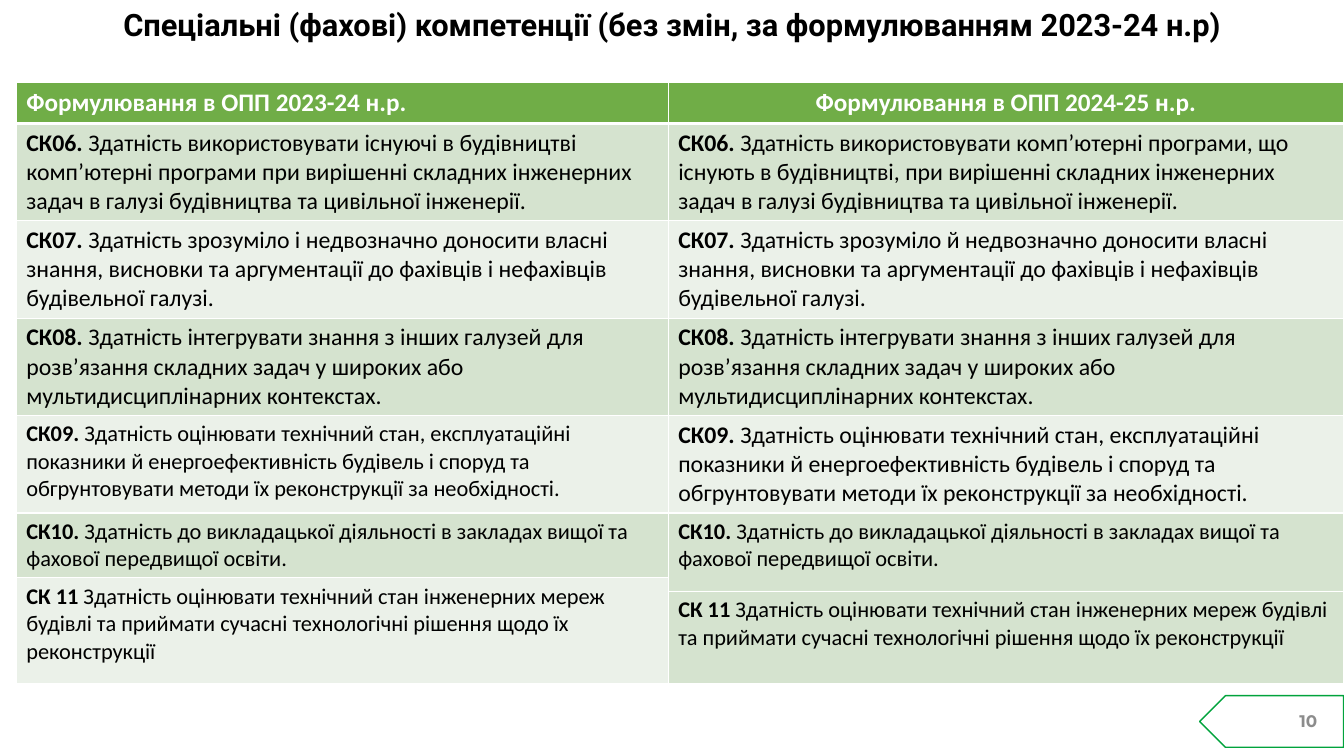
import dataclasses

import lxml.etree
import pptx
import pptx.dml.color
import pptx.enum.shapes
import pptx.enum.text
import pptx.oxml.ns
import pptx.util

Cm = pptx.util.Cm
Align = pptx.enum.text.PP_ALIGN
Anchor = pptx.enum.text.MSO_ANCHOR


@dataclasses.dataclass(frozen=True)
class Theme:
    header: str = "70AD47"
    dark_band: str = "D5E3CF"
    light_band: str = "EBF1E9"
    white: str = "FFFFFF"
    black: str = "000000"
    grey: str = "8C8C8C"
    outline: str = "01A33C"
    title_size: int = 22
    header_size: int = 18
    body_size: int = 17
    small_size: int = 16
    number_size: int = 12


theme = Theme()
rgb = pptx.dml.color.RGBColor.from_string


def write(para, text, font="Calibri", size=theme.body_size, color=theme.black,
          bold=False, align=Align.LEFT):
    para.alignment = align
    span = para.add_run()
    span.text = text
    span.font.name = font
    span.font.size = pptx.util.Pt(size)
    span.font.bold = bold
    span.font.color.rgb = rgb(color)


def style_cell(cell, fill, bottom_width):
    properties = cell._tc.get_or_add_tcPr()
    for side in ("lnL", "lnR", "lnT", "lnB"):
        width = bottom_width if side == "lnB" else 1
        line = lxml.etree.SubElement(properties, pptx.oxml.ns.qn(f"a:{side}"),
                                     w=str(pptx.util.Pt(width)))
        paint = lxml.etree.SubElement(line, pptx.oxml.ns.qn("a:solidFill"))
        lxml.etree.SubElement(paint, pptx.oxml.ns.qn("a:srgbClr"), val=theme.white)
    cell.fill.solid()
    cell.fill.fore_color.rgb = rgb(fill)


deck = pptx.Presentation()
deck.slide_width, deck.slide_height = Cm(33.87), Cm(19.05)
page = deck.slides.add_slide(deck.slide_layouts[5])

# Title
title = page.shapes.title
title.left, title.top, title.width, title.height = Cm(2.33), Cm(-1.17), Cm(29.21), Cm(3.68)
title.text_frame.auto_size = pptx.enum.text.MSO_AUTO_SIZE.NONE
title.text_frame.vertical_anchor = Anchor.MIDDLE
para = title.text_frame.paragraphs[0]
para.line_spacing = 0.9
write(para, "Спеціальні (фахові) компетенції (без змін, за формулюванням 2023-24 н.р)",
      font="Roboto", size=theme.title_size, bold=True, align=Align.CENTER)

# Table grid
column_widths = (16.43, 17.02)
row_heights = (1.0, 2.45, 2.45, 2.45, 2.45, 1.63, 0.34, 2.33)
table = page.shapes.add_table(len(row_heights), len(column_widths), Cm(0.41), Cm(2.08),
                              Cm(sum(column_widths)), Cm(sum(row_heights))).table
table.horz_banding = False
for column, width in zip(table.columns, column_widths):
    column.width = Cm(width)
for row, height in zip(table.rows, row_heights):
    row.height = Cm(height)

# Bands, with the last two competences starting at different heights
for row_index in range(len(row_heights)):
    band = theme.dark_band if row_index % 2 else theme.light_band
    for column_index in range(len(column_widths)):
        style_cell(table.cell(row_index, column_index),
                   band if row_index else theme.header, 1 if row_index else 3)
table.cell(6, 0).merge(table.cell(7, 0))
table.cell(5, 1).merge(table.cell(6, 1))

# Header row
headings = (("Формулювання в ОПП 2023-24 н.р.", Align.LEFT),
            ("Формулювання в ОПП 2024-25 н.р.", Align.CENTER))
for column_index, (heading, align) in enumerate(headings):
    write(table.cell(0, column_index).text_frame.paragraphs[0], heading,
          size=theme.header_size, color=theme.white, bold=True, align=align)

# Competences: code, wordings (one if unchanged), sizes, rows
body, small = theme.body_size, theme.small_size
competences = (
    ("СК06.", ("Здатність використовувати існуючі в будівництві комп’ютерні програми при "
               "вирішенні складних інженерних задач в галузі будівництва та цивільної інженерії.",
               "Здатність використовувати комп’ютерні програми, що існують в будівництві, при "
               "вирішенні складних інженерних задач в галузі будівництва та цивільної інженерії."),
     (body, body), (1, 1)),
    ("СК07.", ("Здатність зрозуміло і недвозначно доносити власні знання, висновки та "
               "аргументації до фахівців і нефахівців будівельної галузі.",
               "Здатність зрозуміло й недвозначно доносити власні знання, висновки та "
               "аргументації до фахівців і нефахівців будівельної галузі."),
     (body, body), (2, 2)),
    ("СК08.", ("Здатність інтегрувати знання з інших галузей для розв’язання складних задач "
               "у широких або мультидисциплінарних контекстах.",),
     (body, body), (3, 3)),
    ("СК09.", ("Здатність оцінювати технічний стан, експлуатаційні показники й "
               "енергоефективність будівель і споруд та обгрунтовувати методи їх "
               "реконструкції за необхідності.",),
     (small, body), (4, 4)),
    ("СК10.", ("Здатність до викладацької діяльності в закладах вищої та фахової "
               "передвищої освіти.",),
     (small, small), (5, 5)),
    ("СК 11", ("Здатність оцінювати технічний стан інженерних мереж будівлі та приймати "
               "сучасні технологічні рішення щодо їх реконструкції",),
     (small, small), (6, 7)),
)
for code, wordings, sizes, rows in competences:
    for column_index, (size, row_index) in enumerate(zip(sizes, rows)):
        para = table.cell(row_index, column_index).text_frame.paragraphs[0]
        write(para, code + " ", size=size, bold=True)
        write(para, wordings[min(column_index, len(wordings) - 1)], size=size)

# Page number tag
tag = page.shapes.add_shape(pptx.enum.shapes.MSO_SHAPE.PENTAGON,
                            Cm(30.23), Cm(17.53), Cm(3.63), Cm(1.3))
tag.rotation = 180
tag.shadow.inherit = False
tag.fill.solid()
tag.fill.fore_color.rgb = rgb(theme.white)
tag.line.color.rgb = rgb(theme.outline)
tag.line.width = pptx.util.Pt(1)

number = page.shapes.add_textbox(Cm(25.83), Cm(17.65), Cm(7.62), Cm(1.02))
number.text_frame.word_wrap = True
number.text_frame.vertical_anchor = Anchor.MIDDLE
write(number.text_frame.paragraphs[0], "10", font="Montserrat", size=theme.number_size,
      color=theme.grey, bold=True, align=Align.RIGHT)

deck.save("out.pptx")
